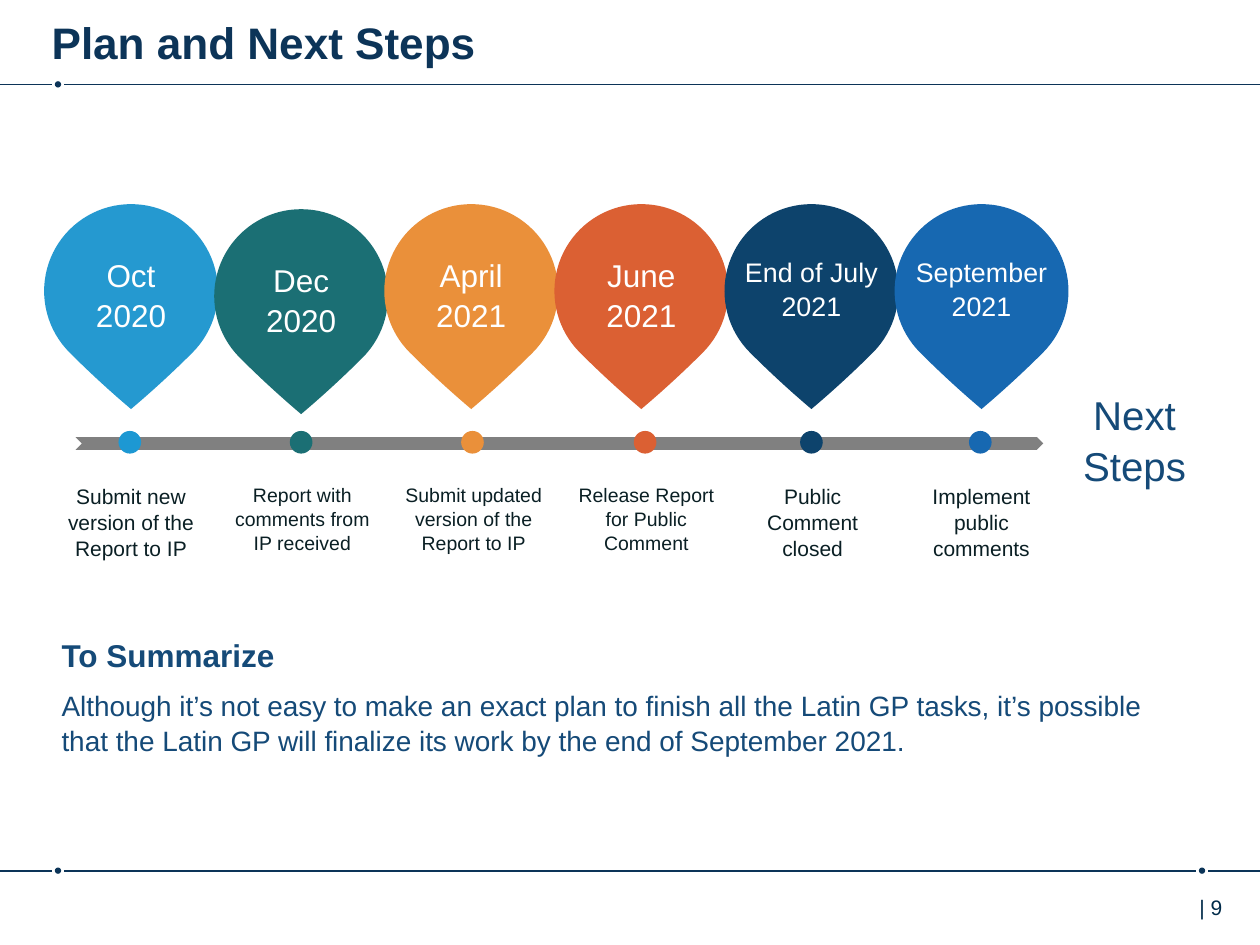
"""Build the "Plan and Next Steps" timeline slide."""
import pptx
import pptx.dml.color
import pptx.enum.shapes
import pptx.enum.text
import pptx.oxml.ns
import pptx.util
from lxml import etree

RGBColor = pptx.dml.color.RGBColor
Inches = pptx.util.Inches
Pt = pptx.util.Pt
SHAPE = pptx.enum.shapes.MSO_SHAPE
ALIGN = pptx.enum.text.PP_ALIGN
ANCHOR = pptx.enum.text.MSO_ANCHOR

NAVY = RGBColor(0x0C, 0x34, 0x58)
BLUE = RGBColor(0x15, 0x4A, 0x78)
INK = RGBColor(0x0A, 0x1F, 0x24)
NUMBER = RGBColor(0x00, 0x2B, 0x49)
GRAY = RGBColor(0x80, 0x80, 0x80)
WHITE = RGBColor(0xFF, 0xFF, 0xFF)
SKY = RGBColor(0x25, 0x99, 0xD0)
SKY_DOT = RGBColor(0x1D, 0x98, 0xD3)
TEAL = RGBColor(0x1B, 0x6F, 0x74)
AMBER = RGBColor(0xEA, 0x90, 0x3A)
ORANGE = RGBColor(0xDB, 0x60, 0x33)
DEEP = RGBColor(0x0D, 0x43, 0x6C)
ROYAL = RGBColor(0x17, 0x68, 0xB1)

TITLE = "Plan and Next Steps"
NEXT_STEPS = ["Next", "Steps"]
SUMMARY_HEADING = "To Summarize"
SUMMARY = (
    "Although it’s not easy to make an exact plan to finish all the Latin GP tasks, "
    "it’s possible that the Latin GP will finalize its work by the end of September 2021."
)
PAGE = "| 9"

# date lines, date size, label, label size, pin color, dot color, pin drop, milestone nudge
STEPS = [
    (["Oct", "2020"], 18, "Submit new version of the Report to IP", 12, SKY, SKY_DOT, 0, 0),
    (["Dec", "2020"], 18, "Report with comments from IP received", 11.1, TEAL, TEAL, 0.04, 0.01),
    (["April", "2021"], 18, "Submit updated version of the Report to IP", 11.1, AMBER, AMBER, 0, 0.02),
    (["June", "2021"], 18, "Release Report for Public Comment", 11.1, ORANGE, ORANGE, 0, 0.04),
    (["End of July", "2021"], 15.3, "Public Comment closed", 12, DEEP, DEEP, 0, 0.01),
    (["September", "2021"], 15.3, "Implement public comments", 12, ROYAL, ROYAL, 0, 0),
]

WIDTH, HEIGHT = 10, 7.5
PITCH = 1.35
FIRST_LEFT = 0.35
PIN_TOP, PIN_SIZE = 1.62, 1.38
TEXT_WIDTH, TEXT_HEIGHT = 1.3, 0.71
DOT_SIZE = 0.18
BAR_TOP, BAR_HEIGHT = 3.47, 0.1
LABEL_TOP = 3.78
RULE_DOT, RULE_GAP = 0.05, 0.1
RULES = [(0.67, [0.46]), (6.91, [0.46, 9.54])]


def write_text(shape, lines, size, color, bold=False, align=ALIGN.LEFT, spacing=1.0,
               anchor=ANCHOR.TOP, side_inset=0.1):
    """Fill a shape with formatted paragraphs."""
    frame = shape.text_frame
    frame.word_wrap = True
    frame.vertical_anchor = anchor
    frame.margin_left = frame.margin_right = Inches(side_inset)
    frame.margin_top = frame.margin_bottom = Inches(0.05)
    frame.text = "\n".join(lines)
    for paragraph in frame.paragraphs:
        paragraph.alignment = align
        paragraph.line_spacing = spacing
        paragraph.space_before = Pt(0)
        paragraph.font.name = "Arial"
        paragraph.font.size = Pt(size)
        paragraph.font.bold = bold
        paragraph.font.color.rgb = color


def add_text(slide, box, lines, size, color, **options):
    """Add a text box at a left, top, width, height box."""
    write_text(slide.shapes.add_textbox(*map(Inches, box)), lines, size, color, **options)


def add_filled(slide, kind, box, color):
    """Add a borderless filled shape."""
    shape = slide.shapes.add_shape(kind, *map(Inches, box))
    shape.shadow.inherit = False
    shape.fill.solid()
    shape.fill.fore_color.rgb = color
    shape.line.fill.background()
    return shape


def add_dot(slide, center, middle, size, color):
    """Add a round dot around a point."""
    add_filled(slide, SHAPE.OVAL, (center - size / 2, middle - size / 2, size, size), color)


def add_rule(slide, top, dots):
    """Add a horizontal rule that is broken around each dot."""
    stops = [0]
    for center in dots:
        add_dot(slide, center, top, RULE_DOT, NAVY)
        stops += [center - RULE_GAP / 2, center + RULE_GAP / 2]
    stops.append(WIDTH)
    for start, end in zip(stops[::2], stops[1::2]):
        line = slide.shapes.add_connector(
            pptx.enum.shapes.MSO_CONNECTOR.STRAIGHT,
            Inches(start), Inches(top), Inches(end), Inches(top))
        line.line.color.rgb = NAVY
        line.line.width = Pt(1)
        properties = line._element.spPr
        etree.SubElement(properties, pptx.oxml.ns.qn("a:effectLst"))


def add_step(slide, column, step):
    """Add the pin, date, timeline dot and label of one step."""
    dates, date_size, label, label_size, pin_color, dot_color, drop, nudge = step
    left = FIRST_LEFT + column * PITCH
    text_left = left + (PIN_SIZE - TEXT_WIDTH) / 2
    pin = add_filled(slide, SHAPE.TEAR, (left, PIN_TOP + drop, PIN_SIZE, PIN_SIZE), pin_color)
    pin.adjustments[0] = 0.96
    pin.rotation = 135
    add_text(slide, (text_left, PIN_TOP + 0.35 + drop, TEXT_WIDTH, TEXT_HEIGHT),
             dates, date_size, WHITE, align=ALIGN.CENTER, spacing=1.05)
    add_dot(slide, left + PIN_SIZE / 2 - 0.01 + nudge, BAR_TOP + BAR_HEIGHT / 2 - 0.01,
            DOT_SIZE, dot_color)
    add_text(slide, (text_left + nudge, LABEL_TOP, TEXT_WIDTH, TEXT_HEIGHT),
             [label], label_size, INK, align=ALIGN.CENTER, spacing=1.03)


def main():
    """Build and save the presentation."""
    presentation = pptx.Presentation()
    presentation.slide_width, presentation.slide_height = Inches(WIDTH), Inches(HEIGHT)
    slide = presentation.slides.add_slide(presentation.slide_layouts[5])

    title = slide.shapes.title
    title.left, title.top, title.width, title.height = map(Inches, (0.41, 0.09, 8.76, 0.49))
    write_text(title, [TITLE], 25.2, NAVY, bold=True, anchor=ANCHOR.MIDDLE, side_inset=0)

    for top, dots in RULES:
        add_rule(slide, top, dots)
    add_text(slide, (9.42, 7.05, 0.5, 0.4), [PAGE], 12, NUMBER)

    add_filled(slide, SHAPE.CHEVRON, (0.6, BAR_TOP, 7.68, BAR_HEIGHT), GRAY)
    for column, step in enumerate(STEPS):
        add_step(slide, column, step)
    add_text(slide, (8.3, 3.03, 1.41, 0.91), NEXT_STEPS, 23, BLUE,
             align=ALIGN.CENTER, spacing=1.05)

    add_text(slide, (0.39, 5.02, 7.85, 0.38), [SUMMARY_HEADING], 18, BLUE,
             bold=True, spacing=Pt(19.8))
    add_text(slide, (0.39, 5.41, 8.86, 0.94), [SUMMARY], 16, BLUE, spacing=Pt(19.8))
    presentation.save("out.pptx")


if __name__ == "__main__":
    main()
